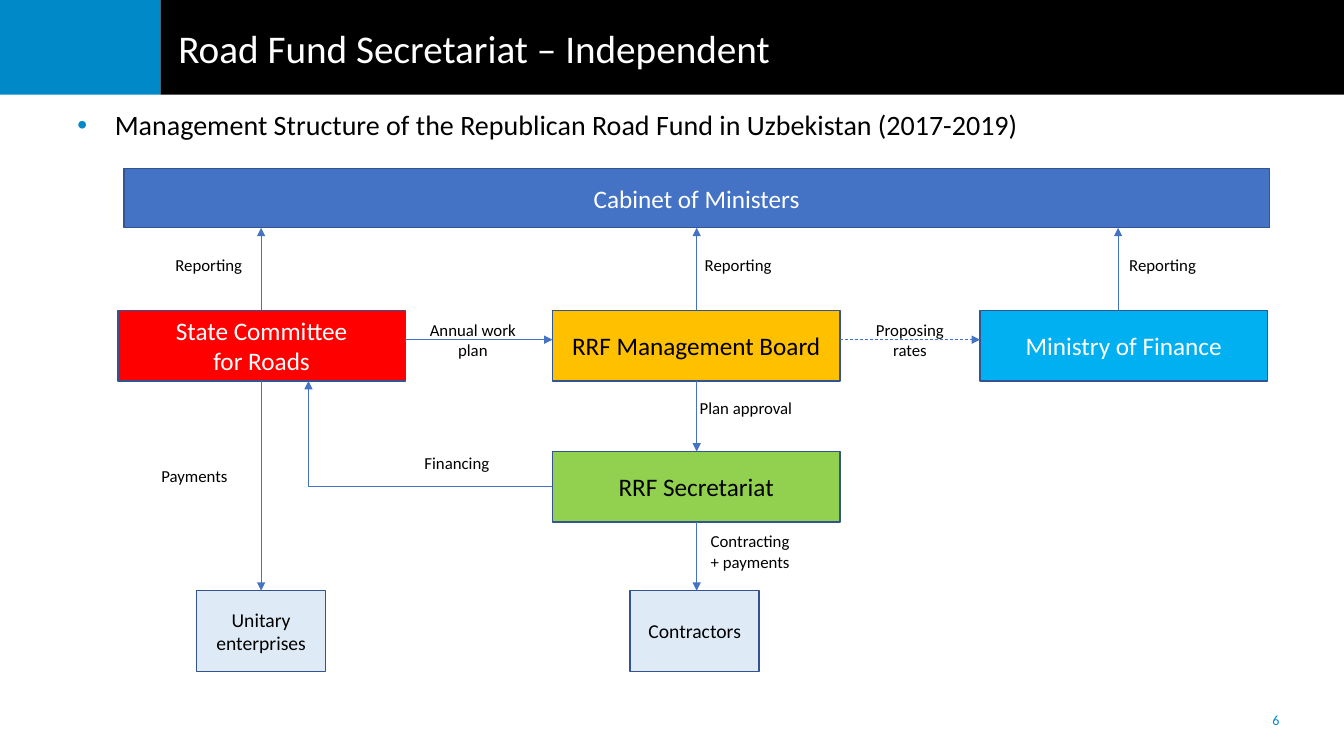
from dataclasses import dataclass

from pptx import Presentation
from pptx.dml.color import RGBColor
from pptx.enum.dml import MSO_LINE
from pptx.enum.shapes import MSO_CONNECTOR, MSO_SHAPE
from pptx.enum.text import MSO_ANCHOR, PP_ALIGN
from pptx.oxml.ns import qn
from pptx.util import Inches, Pt
from lxml import etree

LEFT, CENTER = PP_ALIGN.LEFT, PP_ALIGN.CENTER
TOP, MIDDLE = MSO_ANCHOR.TOP, MSO_ANCHOR.MIDDLE
STRAIGHT, ELBOW = MSO_CONNECTOR.STRAIGHT, MSO_CONNECTOR.ELBOW
RECTANGLE, DASH = MSO_SHAPE.RECTANGLE, MSO_LINE.DASH


@dataclass(frozen=True)
class Theme:
    font: str = "Calibri"
    black: str = "000000"
    white: str = "FFFFFF"
    accent: str = "0089C9"
    cabinet: str = "4472C4"
    committee: str = "FF0000"
    board: str = "FFC000"
    ministry: str = "00B0F0"
    secretariat: str = "92D050"
    recipient: str = "DEEBF7"
    outline: str = "325491"
    arrow: str = "4472C4"
    title_size: int = 28
    body_size: int = 20
    box_size: int = 18
    recipient_size: int = 14
    label_size: int = 12
    number_size: int = 10


THEME = Theme()

ROW_TOP, BOX_WIDTH, BOX_HEIGHT = 3.08, 2.85, 0.7
ROW_BOTTOM = ROW_TOP + BOX_HEIGHT
COMMITTEE_LEFT, BOARD_LEFT, MINISTRY_LEFT = 1.17, 5.48, 9.72
CABINET_TOP, CABINET_HEIGHT = 1.67, 0.59
CABINET_BOTTOM = CABINET_TOP + CABINET_HEIGHT
SECRETARIAT_TOP = 4.48
RECIPIENT_TOP, RECIPIENT_WIDTH, RECIPIENT_HEIGHT = 5.86, 1.28, 0.8
COMMITTEE_AXIS, BOARD_AXIS, MINISTRY_AXIS = 2.59, 6.91, 11.09
FLOW_LINE = 3.37


def color(value):
    return RGBColor.from_string(value)


def write(shape, text, size, ink=THEME.black, align=LEFT, anchor=TOP, inset=(0, 0)):
    """Fill a shape with text, one paragraph for each line; inset is side, top."""
    frame = shape.text_frame
    frame.word_wrap = True
    frame.vertical_anchor = anchor
    frame.margin_left = frame.margin_right = Inches(inset[0])
    frame.margin_top = frame.margin_bottom = Inches(inset[1])
    frame.text = text
    for para in frame.paragraphs:
        para.alignment = align
        for span in para.runs:
            span.font.name = THEME.font
            span.font.size = Pt(size)
            span.font.color.rgb = color(ink)
    return frame


def add_text(page, text, place, size, **options):
    box = page.shapes.add_textbox(*map(Inches, place))
    return write(box, text, size, **options)


def add_rectangle(page, place, fill, outline=None):
    shape = page.shapes.add_shape(RECTANGLE, *map(Inches, place))
    shape.shadow.inherit = False
    shape.fill.solid()
    shape.fill.fore_color.rgb = color(fill)
    if outline:
        shape.line.color.rgb = color(outline)
        shape.line.width = Pt(1)
    else:
        shape.line.fill.background()
    return shape


def add_box(page, text, place, fill, ink=THEME.black, size=THEME.box_size):
    shape = add_rectangle(page, place, fill, THEME.outline)
    write(shape, text, size, ink=ink, align=CENTER, anchor=MIDDLE)


def add_arrow(page, start, end, kind=STRAIGHT, dash=None):
    """Draw an arrow with its head at end; an elbow turns once."""
    arrow = page.shapes.add_connector(kind, *map(Inches, start + end))
    arrow.line.color.rgb = color(THEME.arrow)
    arrow.line.width = Pt(0.5)
    if dash:
        arrow.line.dash_style = dash
    properties = arrow._element.spPr
    etree.SubElement(properties.find(qn("a:ln")), qn("a:tailEnd"), type="triangle")
    etree.SubElement(properties, qn("a:effectLst"))
    if kind == ELBOW:
        properties.find(qn("a:prstGeom")).set("prst", "bentConnector2")


def add_bullet(para, indent):
    properties = para._p.get_or_add_pPr()
    properties.set("marL", str(Inches(indent)))
    properties.set("indent", str(-Inches(indent)))
    tint = etree.SubElement(properties, qn("a:buClr"))
    etree.SubElement(tint, qn("a:srgbClr"), val=THEME.accent)
    etree.SubElement(properties, qn("a:buFont"), typeface="Arial")
    etree.SubElement(properties, qn("a:buChar"), char="•")


def add_header(page):
    add_rectangle(page, (1.59, 0, 11.74, 0.94), THEME.black)
    add_rectangle(page, (0, 0, 1.59, 0.94), THEME.accent)
    add_text(page, "Road Fund Secretariat – Independent", (1.67, 0.08, 11.66, 0.79),
             THEME.title_size, ink=THEME.white, anchor=MIDDLE, inset=(0.1, 0.05))
    body = add_text(
        page, "Management Structure of the Republican Road Fund in Uzbekistan (2017-2019)",
        (0.67, 1.02, 12.66, 0.5), THEME.body_size, inset=(0.1, 0.05))
    para = body.paragraphs[0]
    para.space_before = Pt(4)
    add_bullet(para, 0.37)


def add_boxes(page):
    add_box(page, "Cabinet of Ministers", (1.23, CABINET_TOP, 11.36, CABINET_HEIGHT),
            THEME.cabinet, THEME.white)
    for text, left, top, fill, ink in (
        ("State Committee\nfor Roads", COMMITTEE_LEFT, ROW_TOP, THEME.committee, THEME.white),
        ("RRF Management Board", BOARD_LEFT, ROW_TOP, THEME.board, THEME.black),
        ("Ministry of Finance", MINISTRY_LEFT, ROW_TOP, THEME.ministry, THEME.white),
        ("RRF Secretariat", BOARD_LEFT, SECRETARIAT_TOP, THEME.secretariat, THEME.black),
    ):
        add_box(page, text, (left, top, BOX_WIDTH, BOX_HEIGHT), fill, ink)
    for text, left in (("Unitary enterprises", 1.95), ("Contractors", 6.25)):
        add_box(page, text, (left, RECIPIENT_TOP, RECIPIENT_WIDTH, RECIPIENT_HEIGHT),
                THEME.recipient, size=THEME.recipient_size)


def add_labels(page):
    for text, left, top, width, align in (
        ("Reporting", 1.74, 2.53, 1.73, LEFT),
        ("Reporting", 6.99, 2.53, 1.73, LEFT),
        ("Reporting", 11.2, 2.53, 1.73, LEFT),
        ("Annual work plan", 4.12, 3.17, 1.14, CENTER),
        ("Proposing\nrates", 8.43, 3.17, 1.19, CENTER),
        ("Plan approval", 6.94, 3.95, 1.14, LEFT),
        ("Financing", 4.21, 4.49, 1.14, LEFT),
        ("Payments", 1.6, 4.62, 1.73, LEFT),
        ("Contracting\n+ payments", 6.8, 5.27, 1.28, CENTER),
    ):
        height = 0.6 if align == CENTER else 0.35
        add_text(page, text, (left, top, width, height), THEME.label_size, align=align)


def add_arrows(page):
    for axis in (COMMITTEE_AXIS, BOARD_AXIS, MINISTRY_AXIS):
        add_arrow(page, (axis, ROW_TOP), (axis, CABINET_BOTTOM))
    for axis, top, bottom in (
        (COMMITTEE_AXIS, ROW_BOTTOM, RECIPIENT_TOP),
        (BOARD_AXIS, ROW_BOTTOM, SECRETARIAT_TOP),
        (BOARD_AXIS, SECRETARIAT_TOP + BOX_HEIGHT, RECIPIENT_TOP),
    ):
        add_arrow(page, (axis, top), (axis, bottom))
    add_arrow(page, (COMMITTEE_LEFT + BOX_WIDTH, FLOW_LINE), (BOARD_LEFT, FLOW_LINE))
    add_arrow(page, (BOARD_LEFT + BOX_WIDTH, FLOW_LINE), (MINISTRY_LEFT, FLOW_LINE), dash=DASH)
    add_arrow(page, (BOARD_LEFT, SECRETARIAT_TOP + BOX_HEIGHT / 2), (3.06, ROW_BOTTOM), ELBOW)


def main():
    deck = Presentation()
    deck.slide_width, deck.slide_height = Inches(13.33), Inches(7.5)
    page = deck.slides.add_slide(deck.slide_layouts[6])
    add_header(page)
    add_boxes(page)
    add_labels(page)
    add_arrows(page)
    add_text(page, "6", (12.29, 6.95, 0.73, 0.39), THEME.number_size, ink=THEME.accent,
             align=CENTER, anchor=MIDDLE, inset=(0.1, 0.05))
    deck.save("out.pptx")


if __name__ == "__main__":
    main()
